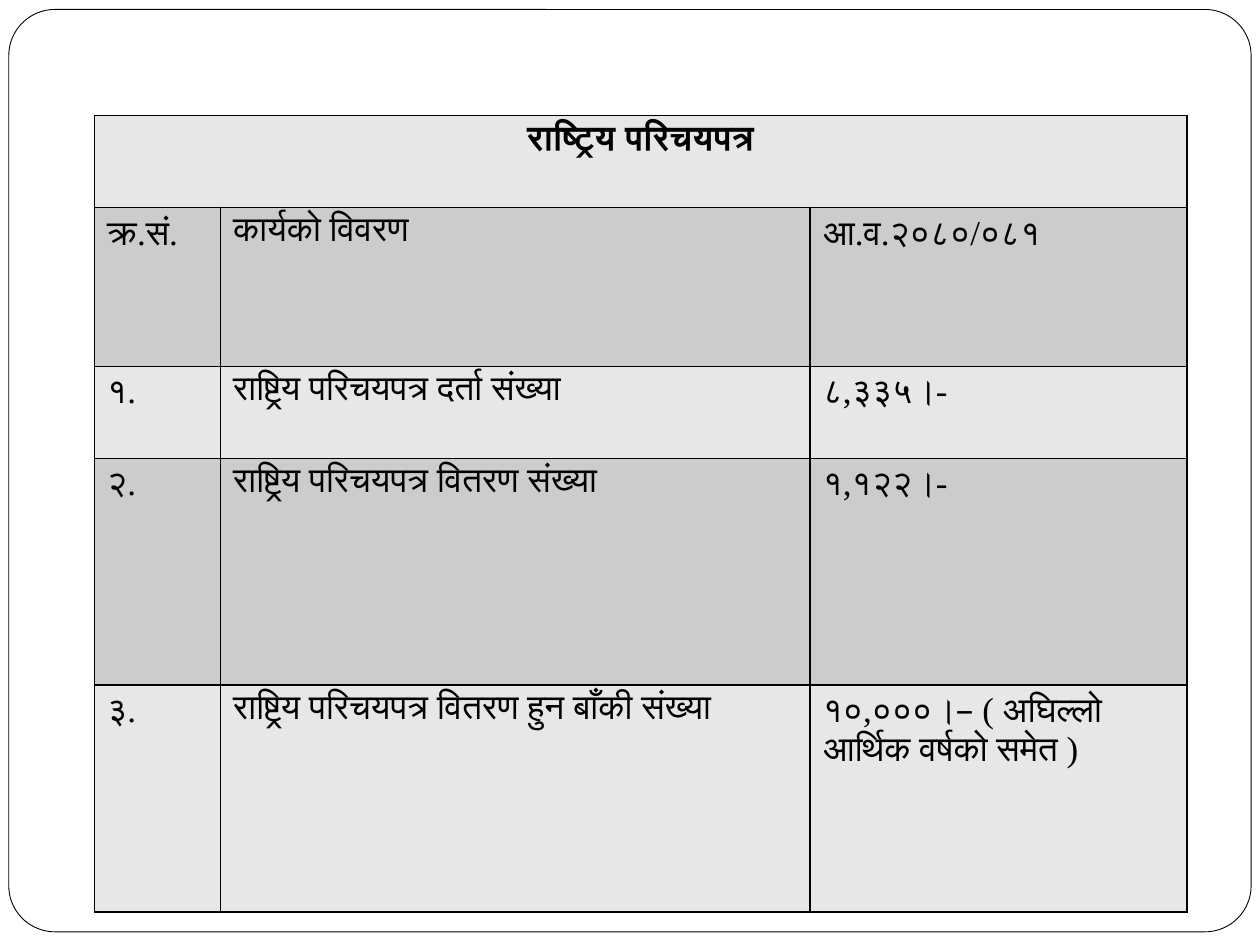
import pptx
import pptx.dml.color
import pptx.enum.shapes
import pptx.enum.text
import pptx.oxml
import pptx.oxml.ns
import pptx.util

FONT = "Times New Roman"
BLACK = "000000"
BANDS = ("E7E7E7", "CCCCCC")
COLUMN_WIDTHS = (1, 4.68, 2.99)
ROW_HEIGHTS = (0.73, 1.26, 0.73, 1.8, 1.8)
TITLE = "राष्ट्रिय परिचयपत्र"
ROWS = (
    (TITLE, "", ""),
    ("क्र.सं.", "कार्यको विवरण", "आ.व.२०८०/०८१"),
    ("१.", "राष्ट्रिय परिचयपत्र दर्ता संख्या", "८,३३५।-"),
    ("२.", "राष्ट्रिय परिचयपत्र वितरण संख्या", "१,१२२।-"),
    ("३.", "राष्ट्रिय परिचयपत्र वितरण हुन बाँकी संख्या",
     "१०,०००।– ( अघिल्लो आर्थिक वर्षको समेत )"),
)


def color(value):
    """Return the colour for a hex string."""
    return pptx.dml.color.RGBColor.from_string(value)


def paint(fill, value):
    """Make a fill solid in one colour."""
    fill.solid()
    fill.fore_color.rgb = color(value)


def add_frame(slide, width, height):
    """Add the rounded frame around the slide, inset by shares of its size."""
    shape = slide.shapes.add_shape(
        pptx.enum.shapes.MSO_SHAPE.ROUNDED_RECTANGLE,
        int(width * 0.007), int(height * 0.01),
        int(width * 0.986), int(height * 0.976))
    shape.adjustments[0] = 0.05
    shape.shadow.inherit = False
    paint(shape.fill, "FFFFFF")
    shape.line.color.rgb = color(BLACK)
    shape.line.width = pptx.util.Pt(0.5)


def add_borders(cell):
    """Draw a thin black line on all four sides of a cell."""
    properties = cell._tc.get_or_add_tcPr()
    for position, side in enumerate(("lnL", "lnR", "lnT", "lnB")):
        border = pptx.oxml.parse_xml(
            f'<a:{side} {pptx.oxml.ns.nsdecls("a")} w="{pptx.util.Pt(1)}">'
            f'<a:solidFill><a:srgbClr val="{BLACK}"/></a:solidFill></a:{side}>')
        properties.insert(position, border)


def write_cell(cell, text, bold):
    """Set the text of a cell and format its runs."""
    cell.text_frame.text = text
    for paragraph in cell.text_frame.paragraphs:
        for run in paragraph.runs:
            run.font.name = FONT
            run.font.size = pptx.util.Pt(20)
            run.font.bold = bold
            run.font.color.rgb = color(BLACK)


def add_card_table(slide, width, height):
    """Add the banded table with its title row merged across all columns."""
    table = slide.shapes.add_table(
        len(ROW_HEIGHTS), len(COLUMN_WIDTHS),
        int(width * 0.075), int(height * 0.1223),
        pptx.util.Inches(sum(COLUMN_WIDTHS)),
        pptx.util.Inches(sum(ROW_HEIGHTS))).table
    for column, size in zip(table.columns, COLUMN_WIDTHS):
        column.width = pptx.util.Inches(size)
    for row, size in zip(table.rows, ROW_HEIGHTS):
        row.height = pptx.util.Inches(size)
    for row_index, texts in enumerate(ROWS):
        for column_index, text in enumerate(texts):
            cell = table.cell(row_index, column_index)
            write_cell(cell, text, bold=row_index == 0)
            paint(cell.fill, BANDS[row_index % 2])
            add_borders(cell)
    title = table.cell(0, 0)
    title.merge(table.cell(0, len(COLUMN_WIDTHS) - 1))
    title.text_frame.paragraphs[0].alignment = pptx.enum.text.PP_ALIGN.CENTER


def main():
    """Build the slide and save the presentation."""
    presentation = pptx.Presentation()
    presentation.slide_width = pptx.util.Inches(10)
    presentation.slide_height = pptx.util.Inches(7.5)
    slide = presentation.slides.add_slide(presentation.slide_layouts[6])
    size = presentation.slide_width, presentation.slide_height
    add_frame(slide, *size)
    add_card_table(slide, *size)
    presentation.save("out.pptx")


if __name__ == "__main__":
    main()
